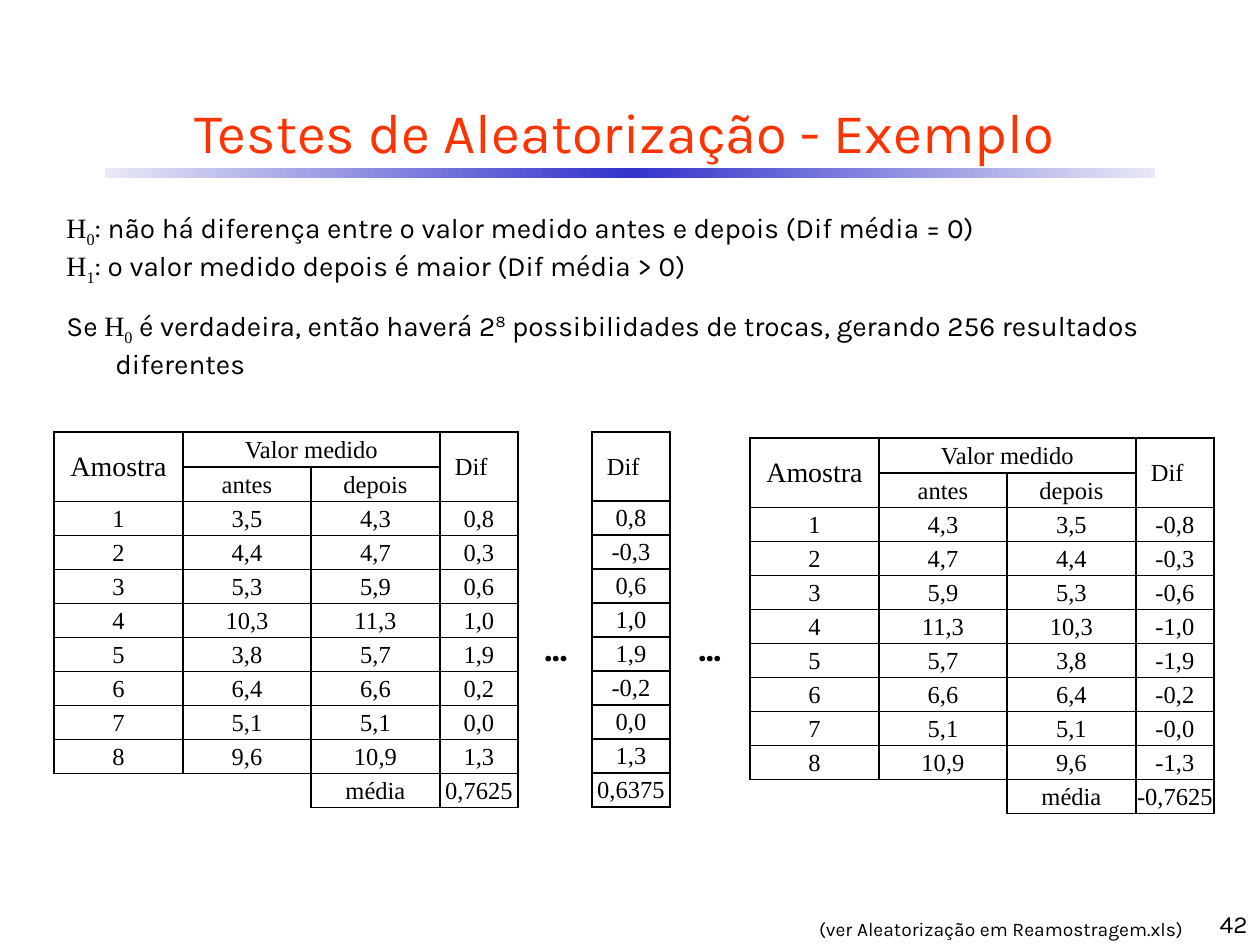
import copy
import dataclasses

import lxml.etree
import pptx
import pptx.dml.color
import pptx.enum.shapes
import pptx.enum.text
import pptx.oxml.ns
import pptx.util

PX = 914400 / 126  # EMU in one px
qn = pptx.oxml.ns.qn
ALIGN = pptx.enum.text.PP_ALIGN
ANCHOR = pptx.enum.text.MSO_ANCHOR
AUTO_SIZE = pptx.enum.text.MSO_AUTO_SIZE


@dataclasses.dataclass(frozen=True)
class Theme:
    ink: str = "000000"
    title: str = "FF3300"
    bar_edge: str = "E8E8F6"
    bar_middle: str = "3333CC"
    sans: str = "Karla"
    serif: str = "Times New Roman"
    title_size: int = 32
    dots_size: int = 20
    body_size: int = 16
    cell_size: int = 14
    note_size: int = 11


theme = Theme()


def place(left, top, width, height):
    return [pptx.util.Emu(round(length * PX)) for length in (left, top, width, height)]


def write(para, spans, size, align=ALIGN.LEFT, color=theme.ink, bold=False):
    """Fill a paragraph with spans of (text, font name, baseline in percent)."""
    para.alignment = align
    for text, font_name, baseline in spans:
        span = para.add_run()
        span.text = text
        span.font.name = font_name
        span.font.size = pptx.util.Pt(size)
        span.font.bold = bold
        span.font.color.rgb = pptx.dml.color.RGBColor.from_string(color)
        if baseline:
            span.font._element.set("baseline", str(baseline * 1000))


deck = pptx.Presentation()
deck.slide_width, deck.slide_height = place(0, 0, 1260, 945)[2:]
page = deck.slides.add_slide(deck.slide_layouts[5])

# Gradient bar under the title
bar = page.shapes.add_shape(
    pptx.enum.shapes.MSO_SHAPE.RECTANGLE, *place(105, 168, 1050, 10))
bar.shadow.inherit = False
bar.line.fill.background()
bar.fill.gradient()
bar.fill.gradient_angle = 0
stop_list = bar._element.spPr.find(".//" + qn("a:gsLst"))
stop_list.append(copy.deepcopy(stop_list[0]))
bar_colors = (theme.bar_edge, theme.bar_middle, theme.bar_edge)
for stop, position, color in zip(bar.fill.gradient_stops, (0, 0.5, 1), bar_colors):
    stop.position = position
    stop.color.rgb = pptx.dml.color.RGBColor.from_string(color)

# Title
title = page.shapes.title
title.left, title.top, title.width, title.height = place(42, 84, 1165, 95)
title.text_frame.vertical_anchor = ANCHOR.MIDDLE
write(title.text_frame.paragraphs[0],
      [("Testes de Aleatorização - Exemplo", theme.sans, 0)],
      theme.title_size, ALIGN.CENTER, theme.title)

# Hypotheses and conclusion, with hanging indents
hypotheses = [
    [("H", theme.serif, 0), ("0", theme.serif, -25),
     (": não há diferença entre o valor medido antes e depois (Dif média = 0)",
      theme.sans, 0)],
    [("H", theme.serif, 0), ("1", theme.serif, -25),
     (": o valor medido depois é maior (Dif média > 0)", theme.sans, 0)],
]
conclusion = [
    [("Se ", theme.sans, 0), ("H", theme.serif, 0), ("0", theme.serif, -25),
     (" é verdadeira, então haverá 2", theme.sans, 0), ("8", theme.sans, 30),
     (" possibilidades de trocas, gerando 256 resultados diferentes", theme.sans, 0)],
]
for top, lines in ((204, hypotheses), (302, conclusion)):
    frame = page.shapes.add_textbox(*place(54, top, 1152, 81)).text_frame
    frame.word_wrap = True
    frame.auto_size = AUTO_SIZE.SHAPE_TO_FIT_TEXT
    for index, spans in enumerate(lines):
        para = frame.add_paragraph() if index else frame.paragraphs[0]
        properties = para._p.get_or_add_pPr()
        properties.set("marL", str(round(49 * PX)))
        properties.set("indent", str(round(-49 * PX)))
        write(para, spans, theme.body_size)

# Ellipses between the tables
for left in (527, 681):
    frame = page.shapes.add_textbox(*place(left, 620, 58, 55)).text_frame
    frame.word_wrap = False
    frame.auto_size = AUTO_SIZE.SHAPE_TO_FIT_TEXT
    write(frame.paragraphs[0], [("...", theme.sans, 0)],
          theme.dots_size, ALIGN.CENTER, bold=True)

# Table data: the last table swaps the two measurements of every sample
before = ["3,5", "4,4", "5,3", "10,3", "3,8", "6,4", "5,1", "9,6"]
after = ["4,3", "4,7", "5,9", "11,3", "5,7", "6,6", "5,1", "10,9"]
difference = ["0,8", "0,3", "0,6", "1,0", "1,9", "0,2", "0,0", "1,3"]
partly_swapped = ["0,8", "-0,3", "0,6", "1,0", "1,9", "-0,2", "0,0", "1,3"]
swapped = ["-" + value for value in difference]
samples = [str(number) for number in range(1, 9)]
header = [["Amostra", "Valor medido", "", "Dif"], ["", "antes", "depois", ""]]
wide_columns = [129, 128, 129, 78]
ROW = 34
tables = [
    (54, 432, wide_columns, header
     + [list(row) for row in zip(samples, before, after, difference)]
     + [["", "", "média", "0,7625"]]),
    (750, 438, wide_columns, header
     + [list(row) for row in zip(samples, after, before, swapped)]
     + [["", "", "média", "-0,7625"]]),
    (592, 432, [78], [["Dif"]] + [[value] for value in partly_swapped] + [["0,6375"]]),
]

# Tables
for left, top, columns, rows in tables:
    is_wide = len(columns) > 1
    heights = [ROW + 1 if is_wide else 2 * ROW + 1] + [ROW] * (len(rows) - 1)
    table = page.shapes.add_table(
        len(rows), len(columns), *place(left, top, sum(columns), sum(heights))).table
    table.first_row = table.horz_banding = False
    for column, width in zip(table.columns, columns):
        column.width = round(width * PX)
    for row, height in zip(table.rows, heights):
        row.height = round(height * PX)

    for row_index, row in enumerate(rows):
        for column_index, text in enumerate(row):
            cell = table.cell(row_index, column_index)
            is_difference = text == "Dif"
            cell.vertical_anchor = ANCHOR.MIDDLE
            cell.margin_left = round((15 if is_difference else 1) * PX)
            cell.margin_right = cell.margin_top = round(PX)
            cell.margin_bottom = 0
            para = cell.text_frame.paragraphs[0]
            if text:
                write(para, [(text, theme.serif, 0)],
                      theme.body_size if text == "Amostra" else theme.cell_size,
                      ALIGN.LEFT if is_difference else ALIGN.CENTER)
            else:
                lxml.etree.SubElement(para._p, qn("a:endParaRPr"),
                                      sz=str(theme.cell_size * 100))

            # Borders: the blank corner at the foot stays open
            sides = "LRTB"
            if row_index == len(rows) - 1 and not text:
                sides = "T" if column_index == 0 else "RT"
            for side in "LRTB":
                line = lxml.etree.SubElement(
                    cell._tc.get_or_add_tcPr(), qn("a:ln" + side), w="12700")
                if side in sides:
                    fill = lxml.etree.SubElement(line, qn("a:solidFill"))
                    lxml.etree.SubElement(fill, qn("a:srgbClr"), val=theme.ink)
                else:
                    lxml.etree.SubElement(line, qn("a:noFill"))
            cell.fill.background()

    if is_wide:
        table.cell(0, 0).merge(table.cell(1, 0))
        table.cell(0, 1).merge(table.cell(0, 2))
        table.cell(0, 3).merge(table.cell(1, 3))

# Source note and page number
footers = [
    ((759, 911, 437, 37), "(ver Aleatorização em Reamostragem.xls)",
     theme.note_size, ANCHOR.TOP),
    ((998, 882, 262, 63), "42", theme.cell_size, ANCHOR.BOTTOM),
]
for bounds, text, size, anchor in footers:
    frame = page.shapes.add_textbox(*place(*bounds)).text_frame
    frame.word_wrap = True
    frame.vertical_anchor = anchor
    write(frame.paragraphs[0], [(text, theme.sans, 0)], size, ALIGN.RIGHT)

deck.save("out.pptx")
